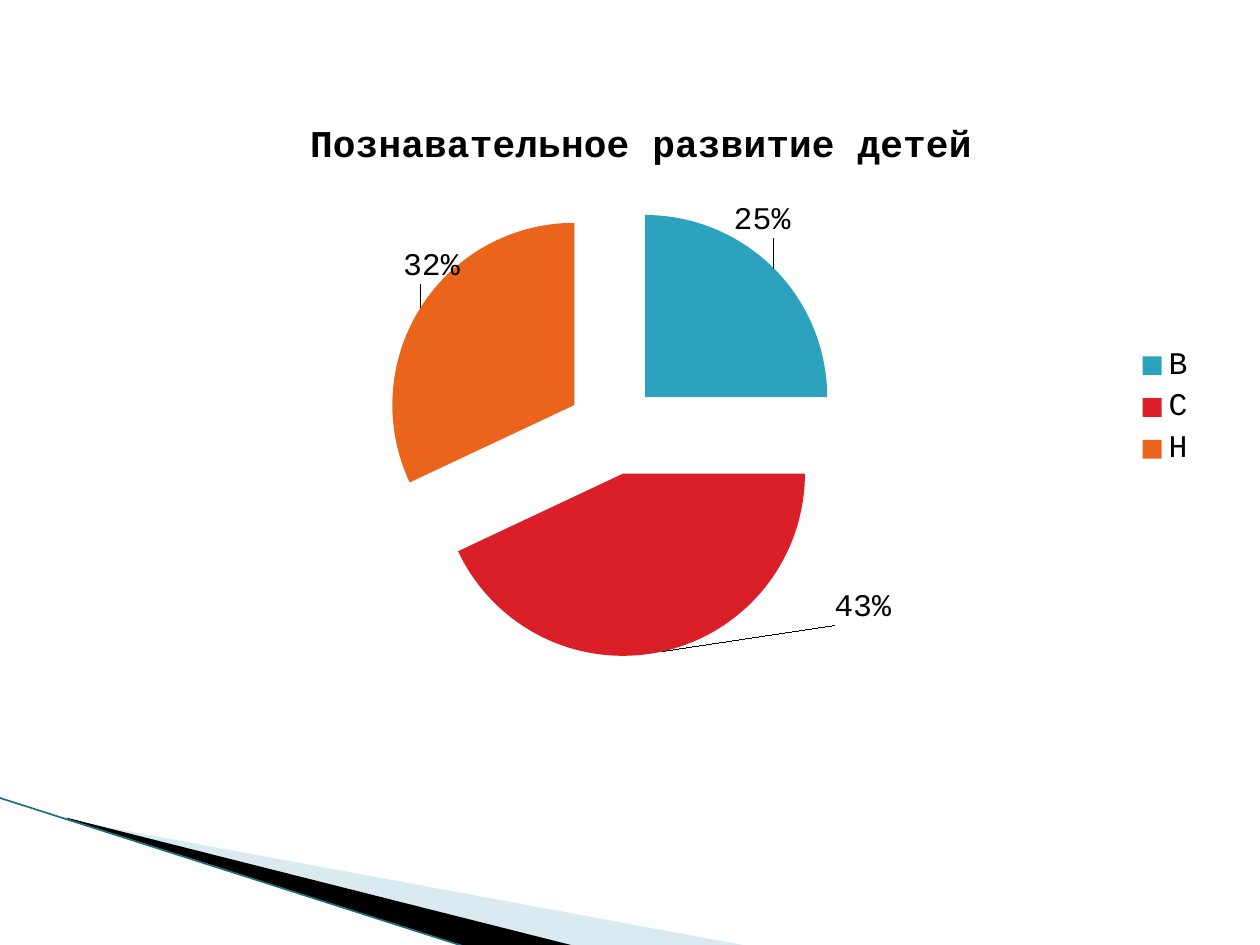
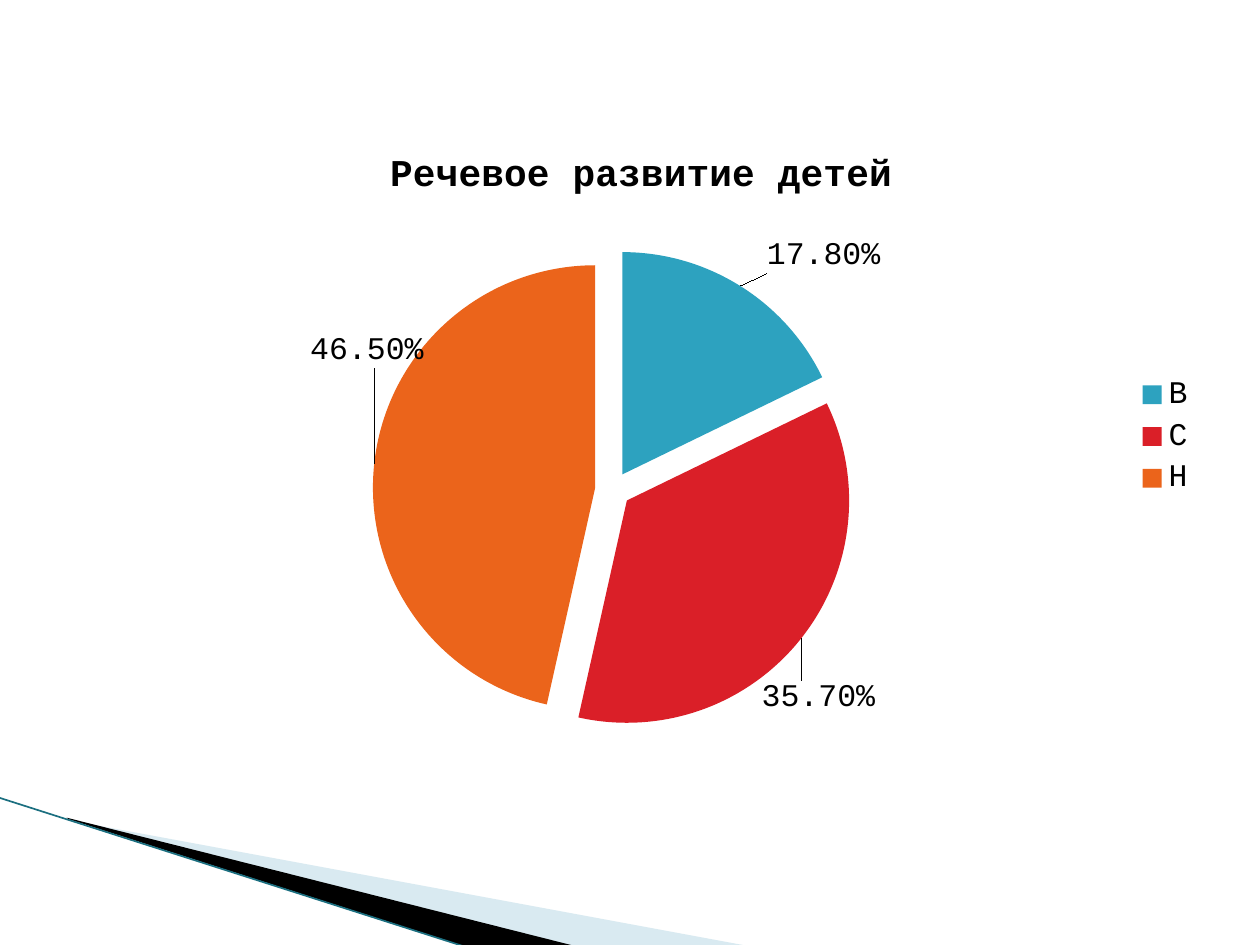
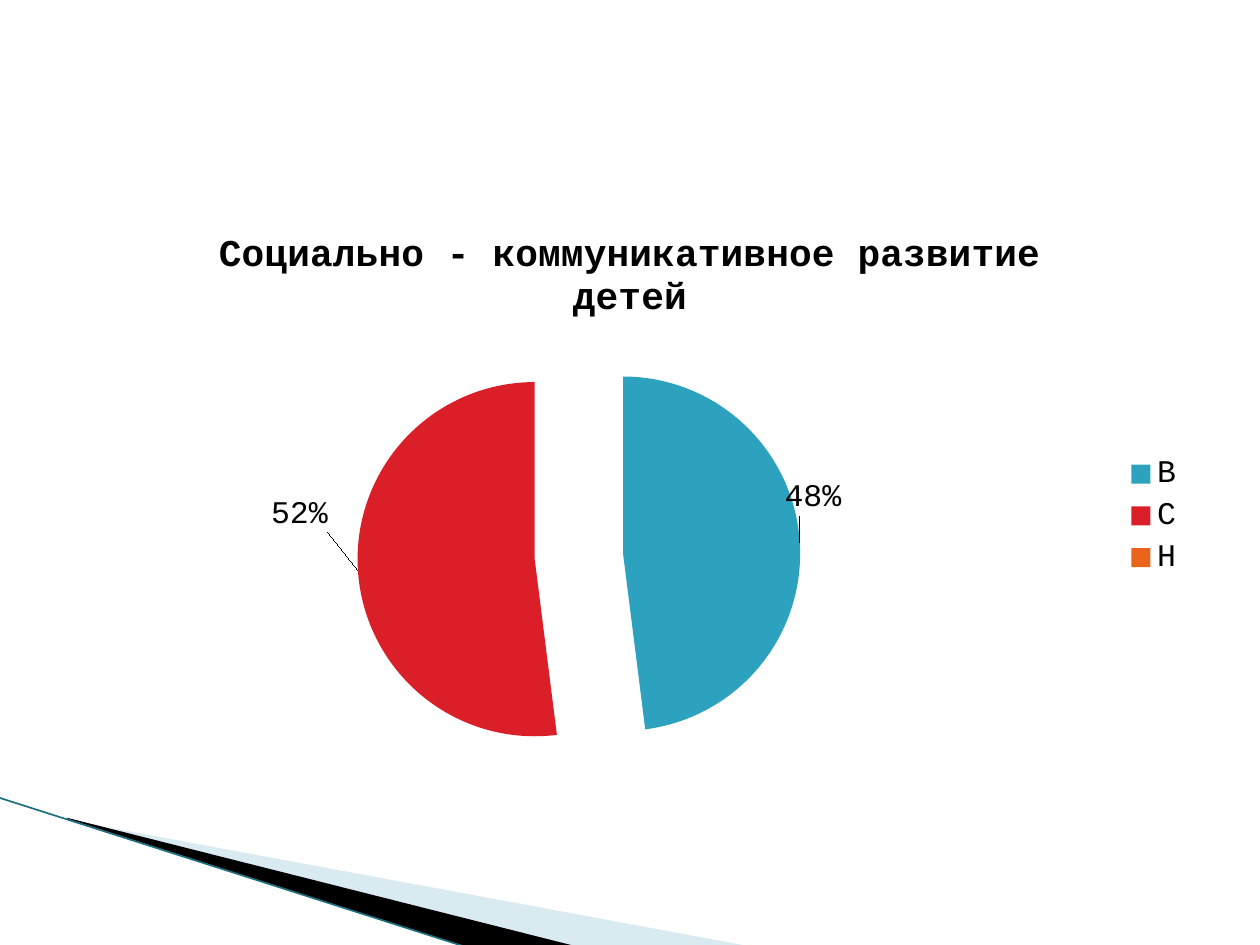
from lxml import etree
from pptx import Presentation
from pptx.chart.data import ChartData
from pptx.dml.color import RGBColor
from pptx.enum.chart import XL_CHART_TYPE, XL_LABEL_POSITION, XL_LEGEND_POSITION
from pptx.enum.shapes import MSO_CONNECTOR
from pptx.oxml.ns import qn
from pptx.util import Pt

PIE = XL_CHART_TYPE.PIE
OUTER = XL_LABEL_POSITION.OUTSIDE_END
RIGHT = XL_LEGEND_POSITION.RIGHT
STRAIGHT = MSO_CONNECTOR.STRAIGHT

PX = 9144  # 100 px to the inch
FONT = "Courier New"
BLACK = RGBColor(0x00, 0x00, 0x00)
PALE = RGBColor(0xA0, 0xCB, 0xDC)
TEAL = RGBColor(0x1B, 0x6F, 0x80)
SLICES = (RGBColor(0x2D, 0xA2, 0xBF), RGBColor(0xDA, 0x1F, 0x28),
          RGBColor(0xEB, 0x64, 0x1B))
LEVELS = ("В", "С", "Н")

# Each label spot is a shift from the slice edge, as a share of the chart
CHARTS = (
    dict(title="Познавательное развитие детей", left=59, top=76,
         values=(0.25, 0.43, 0.32), form="0%", gap=25,
         area=(0.09, 0.17, 0.77, 0.73),
         spots=((-0.04, -0.04), (0.15, -0.11), (0.04, -0.03))),
    dict(title="Речевое развитие детей", left=59, top=99,
         values=(0.178, 0.357, 0.465), form="0.00%", gap=8,
         area=(0.09, 0.2, 0.77, 0.77),
         spots=((0.02, -0.01), (-0.04, 0.06), (0.05, -0.15))),
    dict(title="Социально - коммуникативное развитие детей", left=50, top=162,
         values=(0.48, 0.52, 0), form="0%", gap=25,
         area=(0.07, 0.21, 0.77, 0.71),
         spots=((-0.02, -0.07), (-0.02, -0.09), None)),
)


def add(node, tag, value=None):
    child = etree.SubElement(node, qn(tag))
    if value is not None:
        child.set("val", str(value))
    return child


def place(layout, **parts):
    manual = add(layout, "c:manualLayout")
    for tag, value in parts.items():
        add(manual, f"c:{tag}", value)


class Deck:
    def __init__(self):
        self.prs = Presentation()
        self.prs.slide_width, self.prs.slide_height = 1000 * PX, 750 * PX
        self.base = self.prs.slide_layouts[6]
        self.slide = None

    def start(self):
        self.slide = self.prs.slides.add_slide(self.base)

    def share(self, shape):
        """Move a shape from the slide to the shared layout."""
        self.base.shapes.element.append(shape.element)

    def wedge(self, points, color, alpha=None):
        pen = self.slide.shapes.build_freeform(*points[0], scale=PX)
        pen.add_line_segments(points[1:], close=True)
        shape = pen.convert_to_shape()
        shape.shadow.inherit = False
        shape.fill.solid()
        shape.fill.fore_color.rgb = color
        shape.line.fill.background()
        if alpha:
            tint = shape.element.spPr.find(".//" + qn("a:srgbClr"))
            add(tint, "a:alpha", alpha * 1000)
        return shape

    def line(self, start, end, color, width):
        ends = [n * PX for n in (*start, *end)]
        line = self.slide.shapes.add_connector(STRAIGHT, *ends)
        line.line.color.rgb = color
        line.line.width = Pt(width)
        add(line.element.spPr, "a:effectLst")
        return line

    def font(self, font, size, bold=False):
        font.name, font.size, font.bold = FONT, Pt(size), bold
        font.color.rgb = BLACK

    def pie(self, title, left, top, values, form, gap, area, spots):
        data = ChartData(number_format=form)
        data.categories = LEVELS
        data.add_series(title, values)
        frame = self.slide.shapes.add_chart(
            PIE, left * PX, top * PX, 900 * PX, 495 * PX, data)
        chart = frame.chart
        self.font(chart.font, 18)

        # Title and legend
        chart.has_title = True
        text = chart.chart_title.text_frame
        text.text = title
        self.font(text.paragraphs[0].font, 21.6, True)
        chart.has_legend = True
        chart.legend.position = RIGHT
        chart.legend.include_in_layout = False

        # Plot area
        plot = chart.plots[0]
        plot.vary_by_categories = True
        root = chart.element.find(".//" + qn("c:plotArea"))
        layout = root.find(qn("c:layout"))
        if layout is None:
            layout = etree.Element(qn("c:layout"))
            root.insert(0, layout)
        x, y, w, h = area
        place(layout, layoutTarget="inner", xMode="edge", yMode="edge",
              x=x, y=y, w=w, h=h)

        # Slices and labels
        series = plot.series[0]
        burst = etree.Element(qn("c:explosion"), val=str(gap))
        root.find(".//" + qn("c:ser")).find(qn("c:tx")).addnext(burst)
        labels = series.data_labels
        labels.show_value = True
        labels.number_format = form
        labels.number_format_is_linked = False
        self.font(labels.font, 18)
        for i, color in enumerate(SLICES):
            point = series.points[i]
            point.format.fill.solid()
            point.format.fill.fore_color.rgb = color
            point.data_label.position = OUTER
        for label, spot in zip(root.findall(".//" + qn("c:dLbl")), spots):
            if spot:
                layout = etree.Element(qn("c:layout"))
                place(layout, x=spot[0], y=spot[1])
                label.insert(1, layout)
            else:
                for child in label[1:]:
                    label.remove(child)
                add(label, "c:delete", 1)


def main():
    deck = Deck()
    for i, chart in enumerate(CHARTS):
        deck.start()
        if i == 0:
            # Corner bands, shared by all slides
            deck.share(deck.wedge(
                [(55, 651), (595, 751), (456, 751), (55, 650)], PALE, 40))
            deck.share(deck.wedge(
                [(53, 649), (457, 751), (372, 752), (54, 650)], BLACK))
            deck.share(deck.line((-1, 633), (371, 752), TEAL, 0.95))
        deck.pie(**chart)
    deck.prs.save("out.pptx")


if __name__ == "__main__":
    main()
